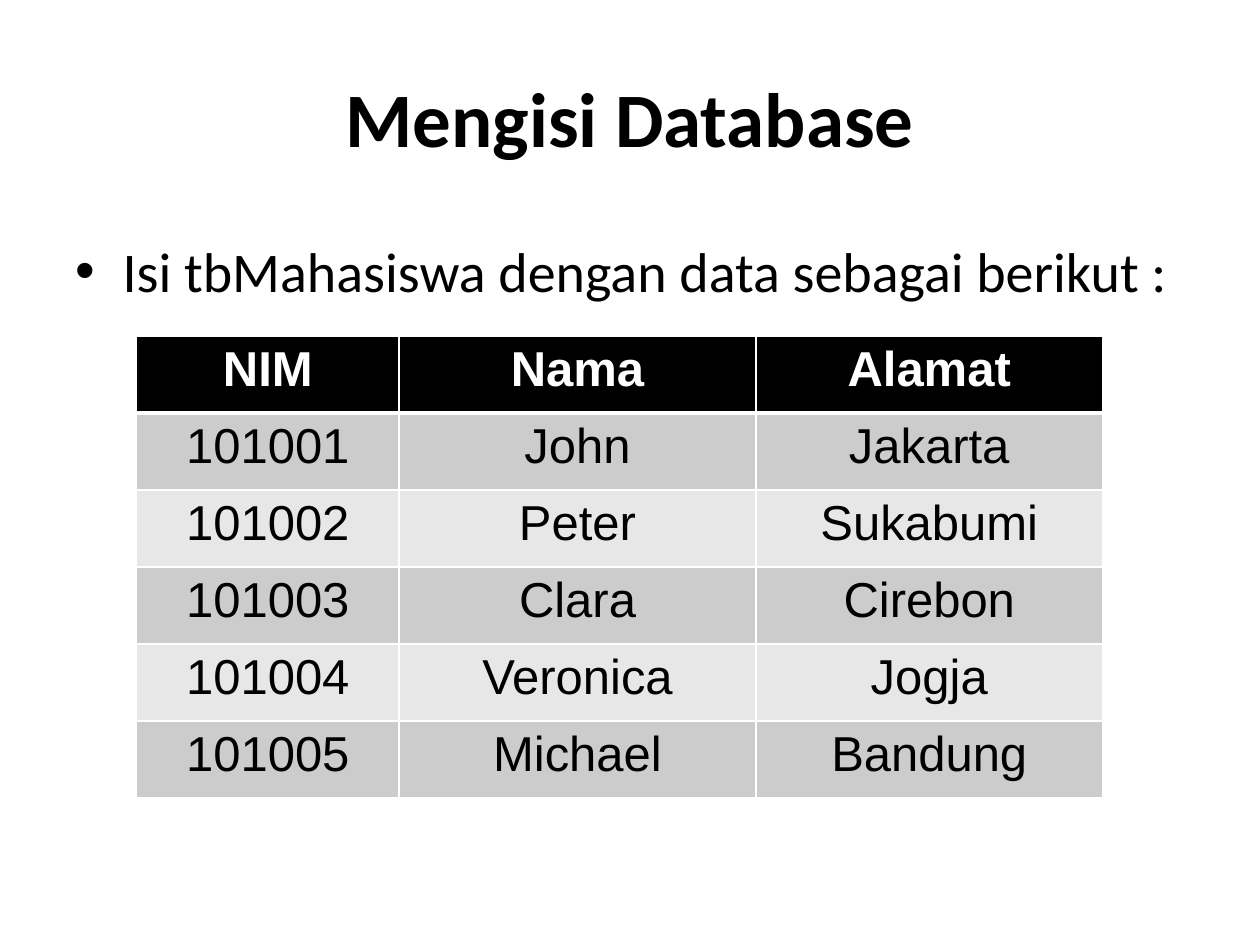
import pptx
import pptx.util
import pptx.dml.color
import pptx.enum.text
import pptx.oxml
import pptx.oxml.ns

Pt = pptx.util.Pt
ALIGN = pptx.enum.text.PP_ALIGN
ANCHOR = pptx.enum.text.MSO_ANCHOR

# Content
TITLE = "Mengisi Database"
TASK = "Isi tbMahasiswa dengan data sebagai berikut :"
ROWS = [
    ("NIM", "Nama", "Alamat"),
    ("101001", "John", "Jakarta"),
    ("101002", "Peter", "Sukabumi"),
    ("101003", "Clara", "Cirebon"),
    ("101004", "Veronica", "Jogja"),
    ("101005", "Michael", "Bandung"),
]
COLS = (150, 204, 198)
ROW_H = 44
COLORS = {"ink": "000000", "paper": "FFFFFF", "odd": "CCCCCC", "even": "E7E7E7"}


def color(name):
    return pptx.dml.color.RGBColor.from_string(COLORS[name])


def add_run(para, text, face, size, ink="ink", bold=False):
    run = para.add_run()
    run.text = text
    font = run.font
    font.name, font.size, font.bold = face, Pt(size), bold
    font.color.rgb = color(ink)


def set_edges(cell, top, bottom):
    props = cell._tc.get_or_add_tcPr()
    edges = (("lnL", 1), ("lnR", 1), ("lnT", top), ("lnB", bottom))
    for spot, (tag, width) in enumerate(edges):
        line = pptx.oxml.parse_xml(
            f'<a:{tag} {pptx.oxml.ns.nsdecls("a")} w="{Pt(width)}"><a:solidFill>'
            f'<a:srgbClr val="{COLORS["paper"]}"/></a:solidFill></a:{tag}>')
        props.insert(spot, line)


deck = pptx.Presentation()
deck.slide_width, deck.slide_height = Pt(720), Pt(540)
slide = deck.slides.add_slide(deck.slide_layouts[5])

# Title
title = slide.shapes.title
title.left, title.top, title.width, title.height = Pt(36), Pt(21.6), Pt(648), Pt(90)
frame = title.text_frame
frame.vertical_anchor = ANCHOR.MIDDLE
frame.paragraphs[0].alignment = ALIGN.CENTER
add_run(frame.paragraphs[0], TITLE, "Calibri", 44, bold=True)

# Bullet line
body = slide.shapes.add_textbox(Pt(36), Pt(131.8), Pt(648), Pt(356.4))
body.text_frame.word_wrap = True
para = body.text_frame.paragraphs[0]
props = para._p.get_or_add_pPr()
props.set("marL", str(Pt(27)))
props.set("indent", str(Pt(-27)))
for mark in ('buFont {} typeface="Arial"', 'buChar {} char="•"'):
    props.append(pptx.oxml.parse_xml(
        f'<a:{mark.format(pptx.oxml.ns.nsdecls("a"))}/>'))
add_run(para, TASK, "Calibri", 32)

# Student table
table = slide.shapes.add_table(
    len(ROWS), len(COLS), Pt(78), Pt(192), Pt(sum(COLS)), Pt(ROW_H * len(ROWS))).table
for col, width in zip(table.columns, COLS):
    col.width = Pt(width)
for r, row in enumerate(ROWS):
    table.rows[r].height = Pt(ROW_H)
    head = r == 0
    fill = "ink" if head else "odd" if r % 2 else "even"
    for c, text in enumerate(row):
        cell = table.cell(r, c)
        cell.fill.solid()
        cell.fill.fore_color.rgb = color(fill)
        set_edges(cell, 3 if r == 1 else 1, 3 if head else 1)
        para = cell.text_frame.paragraphs[0]
        para.alignment = ALIGN.CENTER
        add_run(para, text, "Arial", 28, "paper" if head else "ink", head)

deck.save("out.pptx")
